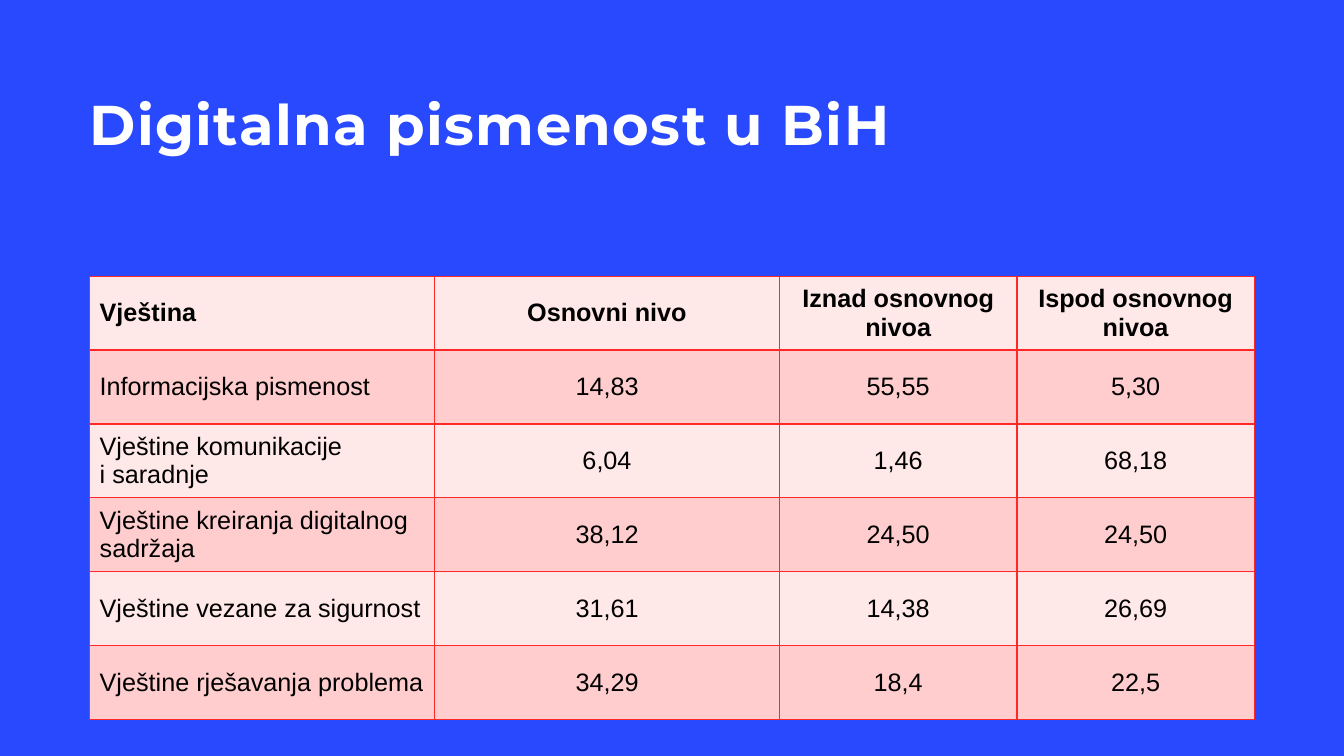
from typing import NamedTuple

from lxml.etree import SubElement
from pptx import Presentation
from pptx.dml.color import RGBColor
from pptx.enum.text import MSO_ANCHOR as Anchor, MSO_AUTO_SIZE as AutoSize, PP_ALIGN as Align
from pptx.oxml.ns import qn
from pptx.util import Inches, Length, Pt

COLORS = {
    "background": "2849FD",
    "title": "FFFFFF",
    "text": "000000",
    "border": "FF2828",
    "light": "FFE8E8",
    "dark": "FFCDCD",
}

SLIDE_WIDTH, SLIDE_HEIGHT = Inches(13.33), Inches(7.5)
GRID_COLUMNS, GRID_ROWS = 15, 75
SKILL_COLUMNS = (3.85, 3.85, 2.65, 2.65)
SKILL_ROW = 7.33
NO_BREAK_SPACE = chr(160)


class Skill(NamedTuple):
    name: str
    basic: str
    above: str
    below: str


SKILLS = [
    Skill("Vještina", "Osnovni nivo", "Iznad osnovnog nivoa", "Ispod osnovnog nivoa"),
    Skill("Informacijska pismenost", "14,83", "55,55", "5,30"),
    Skill(f"Vještine komunikacije i{NO_BREAK_SPACE}saradnje", "6,04", "1,46", "68,18"),
    Skill("Vještine kreiranja digitalnog sadržaja", "38,12", "24,50", "24,50"),
    Skill("Vještine vezane za sigurnost", "31,61", "14,38", "26,69"),
    Skill("Vještine rješavanja problema", "34,29", "18,4", "22,5"),
]


def columns(count: float) -> Length:
    return Length(round(SLIDE_WIDTH * count / GRID_COLUMNS))


def rows(count: float) -> Length:
    return Length(round(SLIDE_HEIGHT * count / GRID_ROWS))


def color(name: str) -> RGBColor:
    return RGBColor.from_string(COLORS[name])


def style_paragraph(paragraph, face: str, size: float, tint: str, bold: bool, align: Align) -> None:
    paragraph.alignment = align
    font = paragraph.font
    font.name, font.size, font.bold = face, Pt(size), bold
    font.color.rgb = color(tint)


def add_title(slide, text: str) -> None:
    heading = slide.shapes.title
    heading.left, heading.top = columns(1), rows(3.6)
    heading.width, heading.height = columns(10.97), rows(16.7)
    frame = heading.text_frame
    frame.text = text
    frame.word_wrap, frame.auto_size = True, AutoSize.NONE
    frame.vertical_anchor = Anchor.TOP
    frame.margin_left = frame.margin_right = frame.margin_bottom = 0
    frame.margin_top = rows(6)
    line = frame.paragraphs[0]
    line.line_spacing = 0.9
    style_paragraph(line, "Montserrat", 40, "title", True, Align.LEFT)
    line._p.pPr.find(qn("a:defRPr")).set("spc", "100")


def add_borders(cell) -> None:
    """Outline all four sides; the lines must come before the cell's fill."""
    properties = cell._tc.get_or_add_tcPr()
    for side in ("a:lnL", "a:lnR", "a:lnT", "a:lnB"):
        line = SubElement(properties, qn(side), w=str(Pt(1)))
        fill = SubElement(line, qn("a:solidFill"))
        SubElement(fill, qn("a:srgbClr"), val=COLORS["border"])


def add_skills_table(slide, skills: list[Skill]) -> None:
    frame = slide.shapes.add_table(
        len(skills), len(SKILL_COLUMNS), columns(1), rows(27.4),
        columns(sum(SKILL_COLUMNS)), rows(SKILL_ROW * len(skills)))
    table = frame.table
    table.first_row = table.horz_banding = False
    for column, share in zip(table.columns, SKILL_COLUMNS):
        column.width = columns(share)
    for r, skill in enumerate(skills):
        table.rows[r].height = rows(SKILL_ROW)
        for c, text in enumerate(skill):
            cell = table.cell(r, c)
            cell.text = text
            cell.vertical_anchor = Anchor.MIDDLE
            add_borders(cell)
            cell.fill.solid()
            cell.fill.fore_color.rgb = color("dark" if r % 2 else "light")
            style_paragraph(cell.text_frame.paragraphs[0], "Arial", 18, "text",
                            r == 0, Align.CENTER if c else Align.LEFT)


def main() -> None:
    deck = Presentation()
    deck.slide_width, deck.slide_height = SLIDE_WIDTH, SLIDE_HEIGHT
    slide = deck.slides.add_slide(deck.slide_layouts.get_by_name("Title Only"))
    background = slide.background.fill
    background.solid()
    background.fore_color.rgb = color("background")
    add_title(slide, "Digitalna pismenost u BiH")
    add_skills_table(slide, SKILLS)
    deck.save("out.pptx")


if __name__ == "__main__":
    main()
